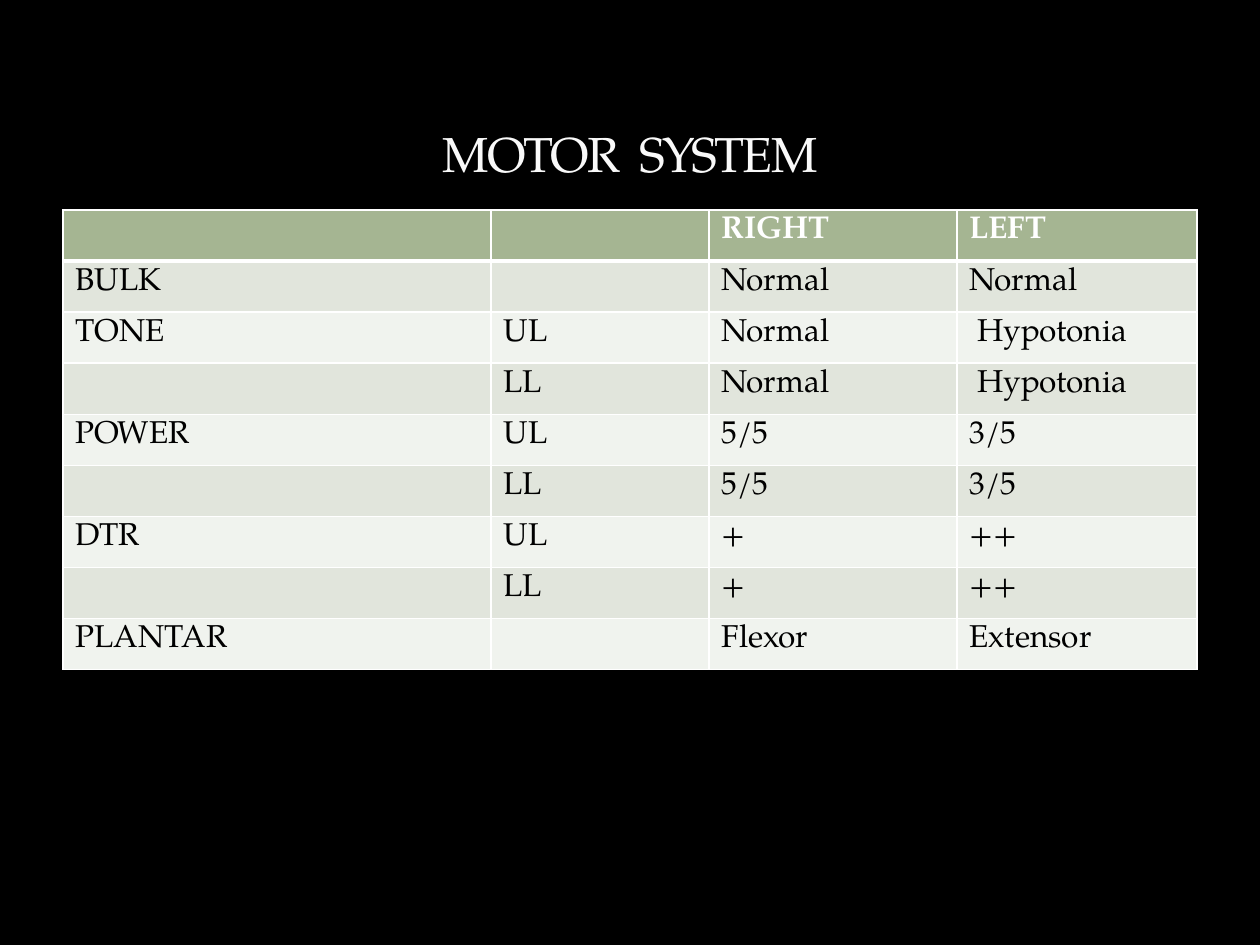
from pptx import Presentation
from pptx.dml.color import RGBColor as RGB
from pptx.enum.text import MSO_ANCHOR as Anchor, PP_ALIGN as Align
from pptx.oxml.ns import qn
from pptx.util import Pt
from lxml.etree import SubElement as Sub

PX = 914400 / 126  # EMU in one pixel
FONT = "TeX Gyre Pagella"


def px(*nums):
    return [round(n * PX) for n in nums]


def style(run, size, color, bold=False):
    font = run.font
    font.name, font.size, font.bold = FONT, Pt(size), bold
    font.color.rgb = RGB.from_string(color)


# Slide
deck = Presentation()
deck.slide_width, deck.slide_height = px(1260, 945)
slide = deck.slides.add_slide(deck.slide_layouts[6])
back = slide.background.fill
back.solid()
back.fore_color.rgb = RGB.from_string("000000")

# Table grid
rows = [
    ["", "", "RIGHT", "LEFT"],
    ["BULK", "", "Normal", "Normal"],
    ["TONE", "UL", "Normal", " Hypotonia"],
    ["", "LL", "Normal", " Hypotonia"],
    ["POWER", "UL", "5/5", "3/5"],
    ["", "LL", "5/5", "3/5"],
    ["DTR", "UL", "+", "++"],
    ["", "LL", "+", "++"],
    ["PLANTAR", "", "Flexor", "Extensor"],
]
widths = [428, 218, 248, 240]
high = 51
grid = slide.shapes.add_table(
    len(rows), len(widths), *px(63, 210, sum(widths), high * len(rows))).table
for col, wide in zip(grid.columns, px(*widths)):
    col.width = wide
for row in grid.rows:
    row.height = px(high)[0]

# Table cells: white borders, thick under the header, banded fills
for r, row in enumerate(rows):
    head = r == 0
    for c, text in enumerate(row):
        cell = grid.cell(r, c)
        props = cell._tc.get_or_add_tcPr()
        for side in "LRTB":
            thick = (side == "B" and head) or (side == "T" and r == 1)
            line = Sub(props, qn("a:ln" + side), w=str(Pt(3 if thick else 1)))
            Sub(Sub(line, qn("a:solidFill")), qn("a:srgbClr"), val="FFFFFF")
        cell.fill.solid()
        shade = "A5B592" if head else ("E1E5DC" if r % 2 else "F0F3EE")
        cell.fill.fore_color.rgb = RGB.from_string(shade)
        if text:
            cell.text_frame.text = text
            run = cell.text_frame.paragraphs[0].runs[0]
            style(run, 18, "FFFFFF" if head else "000000", head)

# Title
frame = slide.shapes.add_textbox(*px(63, 21, 1134, 168)).text_frame
frame.word_wrap = True
frame.vertical_anchor = Anchor.BOTTOM
frame.text = "MOTOR  SYSTEM"
para = frame.paragraphs[0]
para.alignment = Align.CENTER
style(para.runs[0], 28, "F9F9F9")
para.runs[0].font._element.set("spc", "-100")

deck.save("out.pptx")
